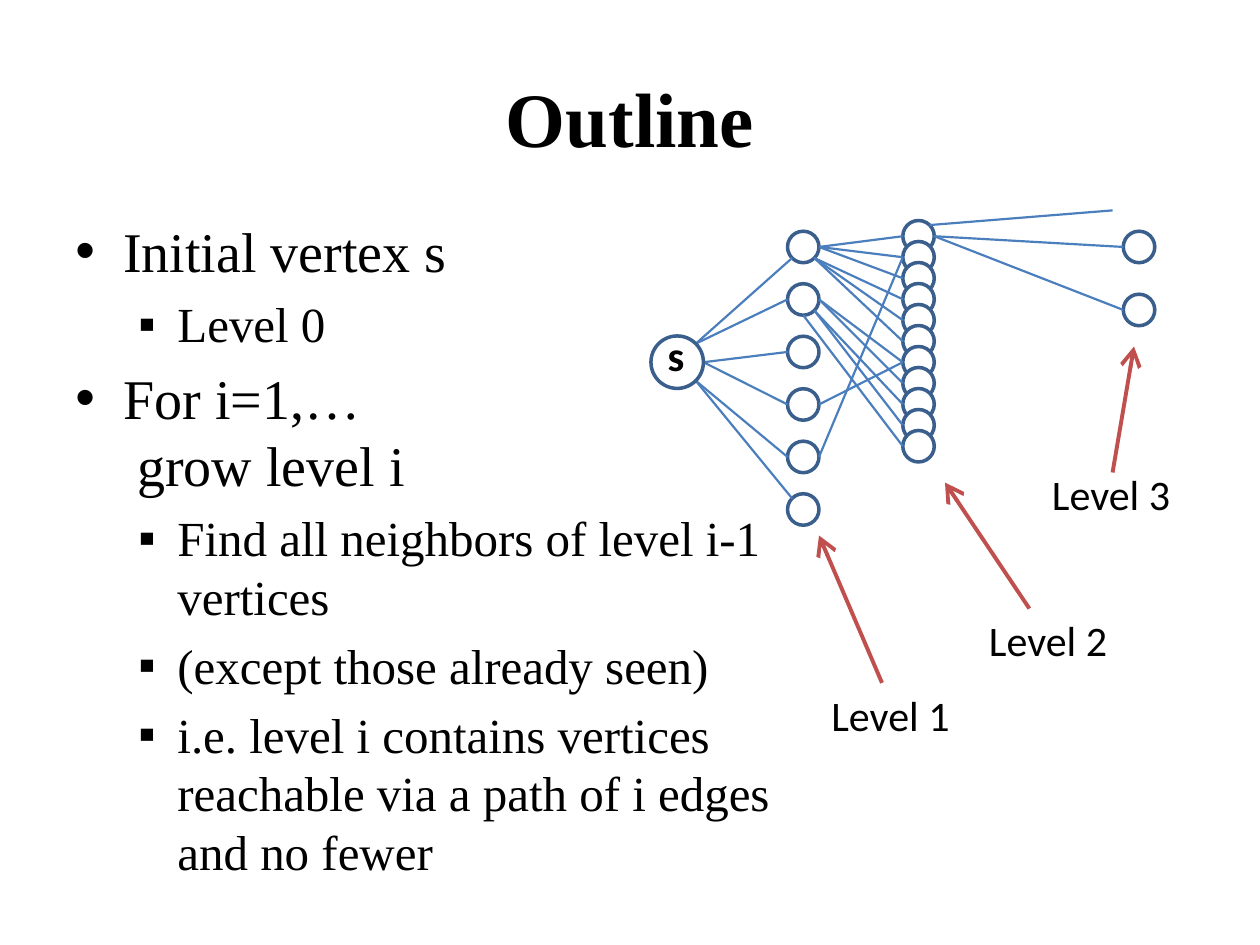
from math import cos, radians, sin

from lxml.etree import SubElement
from pptx import Presentation
from pptx.dml.color import RGBColor
from pptx.enum.shapes import MSO_CONNECTOR, MSO_SHAPE
from pptx.enum.text import MSO_ANCHOR, MSO_AUTO_SIZE, PP_ALIGN
from pptx.oxml.ns import qn
from pptx.util import Inches, Pt

# Content
TITLE = "Outline"
BODY = [  # (indent level, lines)
    (0, ["Initial vertex s"]),
    (1, ["Level 0"]),
    (0, ["For i=1,… ", " grow level i"]),
    (1, ["Find all neighbors of level i-1 vertices"]),
    (1, ["(except those already seen)"]),
    (1, ["i.e. level i contains vertices reachable via a path of i edges and no fewer"]),
]
LEVELS = [  # centre x, first centre y, vertical step, count, radius
    (5.375, 2.875, 0, 1, 5 / 24),
    (6.375, 1.96, 5 / 12, 6, 0.125),
    (7.29, 1.875, 1 / 6, 11, 0.125),
    (9.04, 1.96, 0.5, 2, 0.125),
]
# Edges into each level: (vertex, side, vertex in this level, side)
EDGES = {
    1: [(0, "NE", 0, "SW"), (0, "NE", 1, "W"), (0, "E", 2, "W"),
        (0, "E", 3, "W"), (0, "SE", 4, "W"), (0, "SE", 5, "NW")],
    2: [(0, "E", 0, "W"), (0, "E", 1, "W"), (0, "E", 2, "W"),
        (0, "SE", 3, "W"), (0, "SE", 4, "W"), (0, "SE", 5, "W"),
        (1, "E", 6, "W"), (1, "E", 7, "W"), (1, "SE", 8, "W"),
        (1, "SE", 9, "W"), (1, "S", 10, "W"),
        (4, "E", 1, "W"), (3, "E", 6, "W")],
    3: [(0, "E", 0, "W"), (0, "E", 1, "W")],
}
OPEN_EDGE_END = (8.83, 1.67)
LABELS = [  # text, box, arrow start, arrow end
    ("Level 1", (6.5, 5.42, 2.17, 0.5), (7, 5.42), (6.5, 4.25)),
    ("Level 2", (7.75, 4.83, 1.42, 0.5), (8.17, 4.83), (7.5, 3.83)),
    ("Level 3", (8.25, 3.67, 1.42, 0.5), (8.83, 3.75), (9, 2.75)),
]

THEME = {
    "text": "000000", "fill": "FFFFFF", "outline": "3A5F8C",
    "edge": "4B7EBC", "arrow": "C0504D",
    "serif": "Times New Roman", "sans": "Calibri",
    "title": 44, "body": (32, 28), "label": 24,
    "outline_w": 2, "edge_w": 1.25, "arrow_w": 2.25,
}
BULLETS = [("•", 0.38, 0.38), ("▪", 0.81, 0.31)]  # character, margin, hanging
ANGLES = {"E": 0, "SE": 45, "S": 90, "SW": 135, "W": 180, "NW": 225, "NE": 315}

prs = Presentation()
prs.slide_width, prs.slide_height = Inches(10), Inches(7.5)
s = prs.slides.add_slide(prs.slide_layouts[6])


def add_box(box, wrap=True):
    tf = s.shapes.add_textbox(*map(Inches, box)).text_frame
    tf.word_wrap = wrap
    return tf


def add_run(p, text, size, font, bold=False):
    r = p.add_run()
    r.text = text
    r.font.size, r.font.name, r.font.bold = Pt(size), font, bold
    r.font.color.rgb = RGBColor.from_string(THEME["text"])


def add_label(text, box, wrap=True, bold=False):
    tf = add_box(box, wrap)
    tf.auto_size = MSO_AUTO_SIZE.SHAPE_TO_FIT_TEXT
    add_run(tf.paragraphs[0], text, THEME["label"], THEME["sans"], bold)


def set_bullet(p, char, margin, hanging):
    pPr = p._p.get_or_add_pPr()
    pPr.set("marL", str(Inches(margin)))
    pPr.set("indent", str(-Inches(hanging)))
    SubElement(pPr, qn("a:buFont"), typeface="Arial")
    SubElement(pPr, qn("a:buChar"), char=char)


def add_line(start, end, kind):
    line = s.shapes.add_connector(MSO_CONNECTOR.STRAIGHT, *map(Inches, start + end))
    line.line.color.rgb = RGBColor.from_string(THEME[kind])
    line.line.width = Pt(THEME[kind + "_w"])
    spPr = line._element.spPr
    if kind == "arrow":
        SubElement(spPr.find(qn("a:ln")), qn("a:tailEnd"), type="arrow", w="lg", len="lg")
    SubElement(spPr, qn("a:effectLst"))


def vertex_port(level, index, side):
    x, y, step, _, radius = LEVELS[level]
    angle = radians(ANGLES[side])
    return x + radius * cos(angle), y + index * step + radius * sin(angle)


def add_vertices(level):
    x, y, step, count, radius = LEVELS[level]
    for i in range(count):
        box = (x - radius, y + i * step - radius, 2 * radius, 2 * radius)
        sp = s.shapes.add_shape(MSO_SHAPE.OVAL, *map(Inches, box))
        sp.shadow.inherit = False
        sp.fill.solid()
        sp.fill.fore_color.rgb = RGBColor.from_string(THEME["fill"])
        sp.line.color.rgb = RGBColor.from_string(THEME["outline"])
        sp.line.width = Pt(THEME["outline_w"])


# Title
tf = add_box((0.5, 0.3, 9, 1.25))
tf.vertical_anchor = MSO_ANCHOR.MIDDLE
tf.paragraphs[0].alignment = PP_ALIGN.CENTER
add_run(tf.paragraphs[0], TITLE, THEME["title"], THEME["serif"], bold=True)

# Bulleted text
tf = add_box((0.5, 1.67, 5.75, 5.75))
for i, (level, lines) in enumerate(BODY):
    p = tf.add_paragraph() if i else tf.paragraphs[0]
    size = THEME["body"][level]
    p.level = level
    p.space_before = Pt(0.2 * size)
    set_bullet(p, *BULLETS[level])
    for j, text in enumerate(lines):
        if j:
            p.add_line_break()
        add_run(p, text, size, THEME["serif"])

# Graph levels and the edges that reach them
for level, edges in EDGES.items():
    add_vertices(level)
    for a, a_side, b, b_side in edges:
        add_line(vertex_port(level - 1, a, a_side), vertex_port(level, b, b_side), "edge")
add_line(vertex_port(2, 0, "NE"), OPEN_EDGE_END, "edge")

# Level labels with arrows
for text, box, start, end in LABELS:
    add_label(text, box)
    add_line(start, end, "arrow")

# Initial vertex
add_vertices(0)
add_label("s", (5.2, 2.57, 0.33, 0.5), wrap=False, bold=True)

prs.save("out.pptx")
